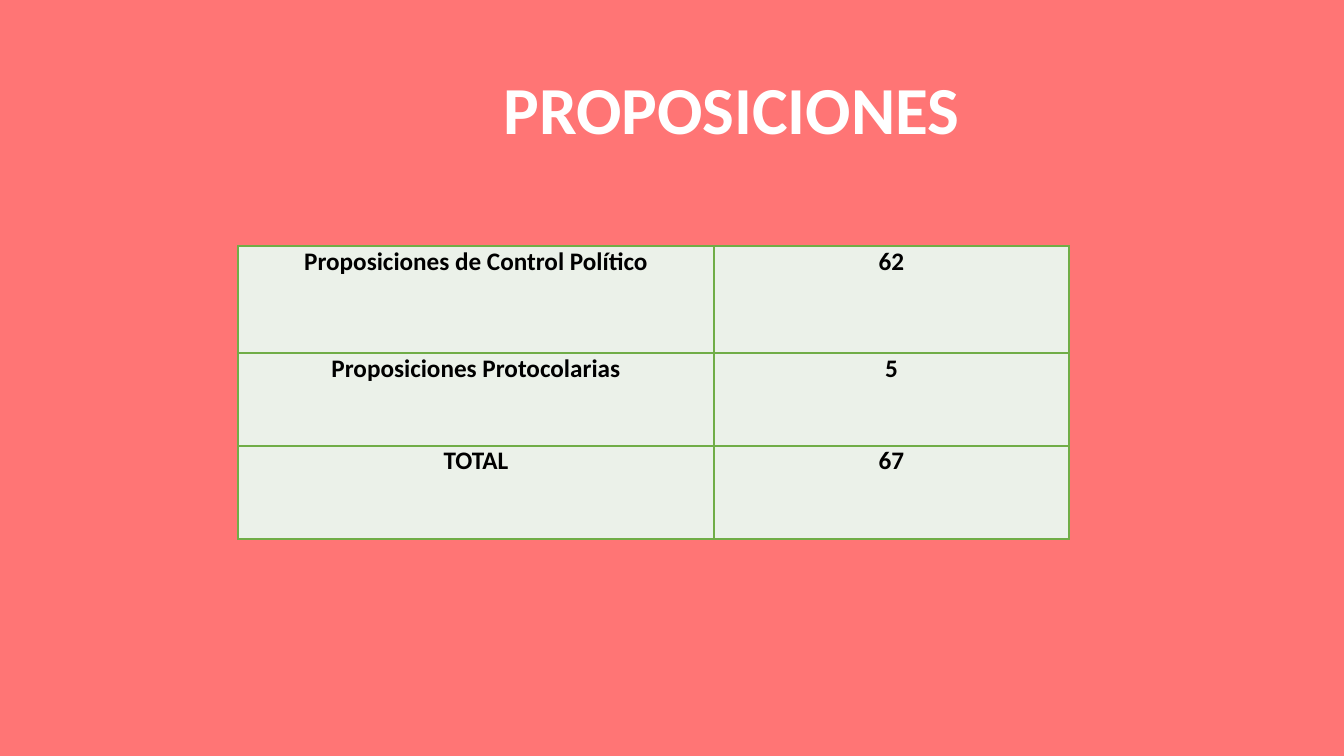
"""Build the PROPOSICIONES slide with its table of counts."""
from lxml import etree
from pptx import Presentation
from pptx.dml.color import RGBColor
from pptx.enum.text import MSO_ANCHOR, PP_ALIGN
from pptx.oxml.ns import qn
from pptx.util import Pt

CENTER = PP_ALIGN.CENTER
MIDDLE = MSO_ANCHOR.MIDDLE
FONT = "Calibri"
BORDER = "70AD47"
COLS = [476, 355]
ROWS = [107, 93, 93]
DATA = [
    ("Proposiciones de Control Político", "62"),
    ("Proposiciones Protocolarias", "5"),
    ("TOTAL", "67"),
]


def px(n):
    return round(n * 914400 / 100.8)


def style(p, size, color):
    p.alignment = CENTER
    font = p.runs[0].font
    font.name, font.size, font.bold = FONT, Pt(size), True
    font.color.rgb = RGBColor.from_string(color)


prs = Presentation()
prs.slide_width, prs.slide_height = px(1344), px(756)
s = prs.slides.add_slide(prs.slide_layouts[5])
s.background.fill.solid()
s.background.fill.fore_color.rgb = RGBColor.from_string("FF7575")

title = s.shapes.title
title.left, title.top, title.width, title.height = px(395), px(40), px(673), px(146)
tf = title.text_frame
tf.text = "PROPOSICIONES"
tf.vertical_anchor = MIDDLE
tf.paragraphs[0].line_spacing = 0.9
style(tf.paragraphs[0], 48, "FFFFFF")

table = s.shapes.add_table(
    len(ROWS), len(COLS), px(238), px(246), px(sum(COLS)), px(sum(ROWS))
).table
table.first_row = table.horz_banding = False
for col, width in zip(table.columns, COLS):
    col.width = px(width)
for row, height, values in zip(table.rows, ROWS, DATA):
    row.height = px(height)
    for cell, value in zip(row.cells, values):
        cell.margin_left = cell.margin_right = cell.margin_top = cell.margin_bottom = 0
        cell.text = value
        style(cell.text_frame.paragraphs[0], 18, "000000")
        tcPr = cell._tc.get_or_add_tcPr()
        for side in ("lnL", "lnR", "lnT", "lnB"):
            ln = etree.SubElement(tcPr, qn(f"a:{side}"), w=str(Pt(1)))
            line_fill = etree.SubElement(ln, qn("a:solidFill"))
            etree.SubElement(line_fill, qn("a:srgbClr"), val=BORDER)
        cell.fill.solid()
        cell.fill.fore_color.rgb = RGBColor.from_string("EBF1E9")

prs.save("out.pptx")
